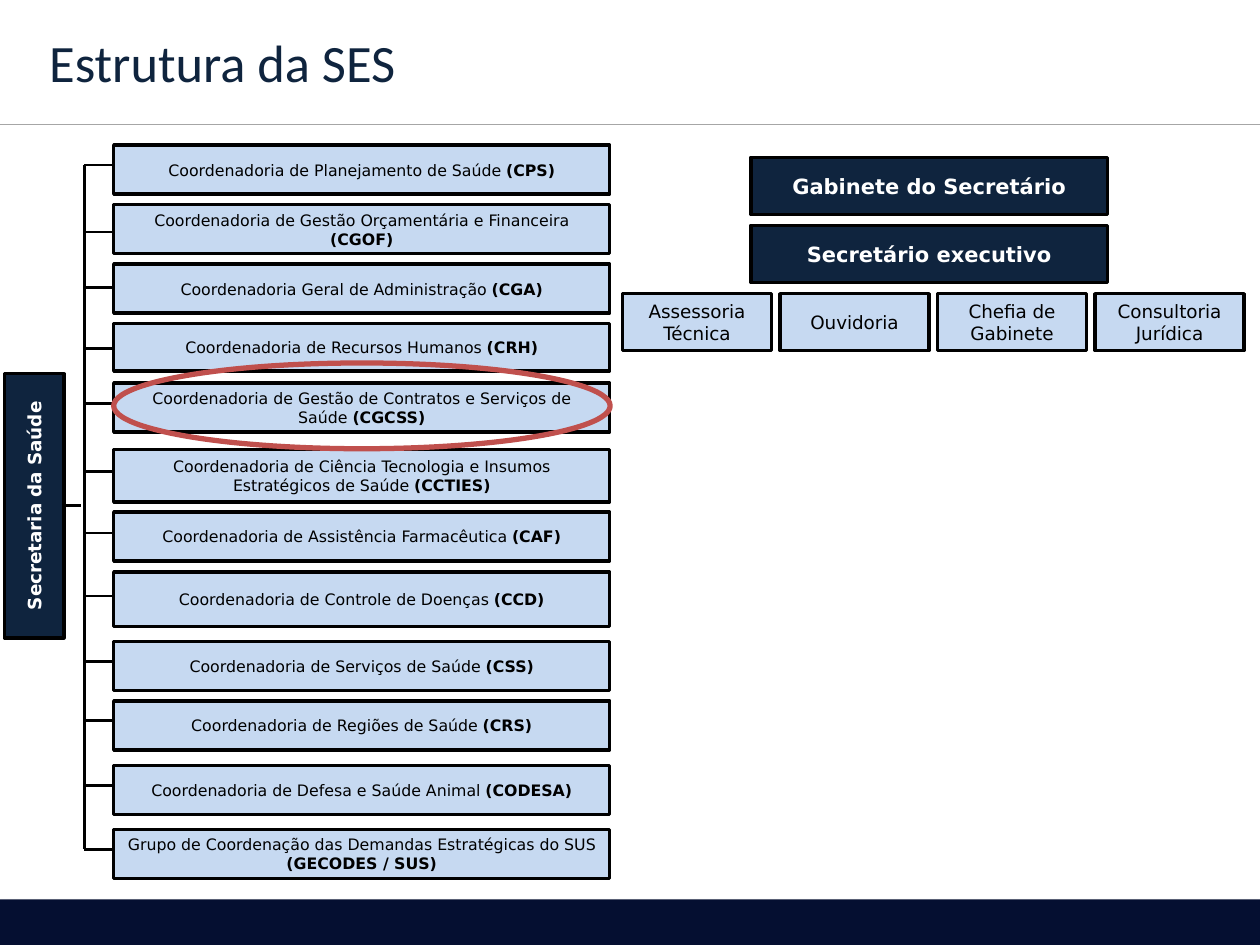
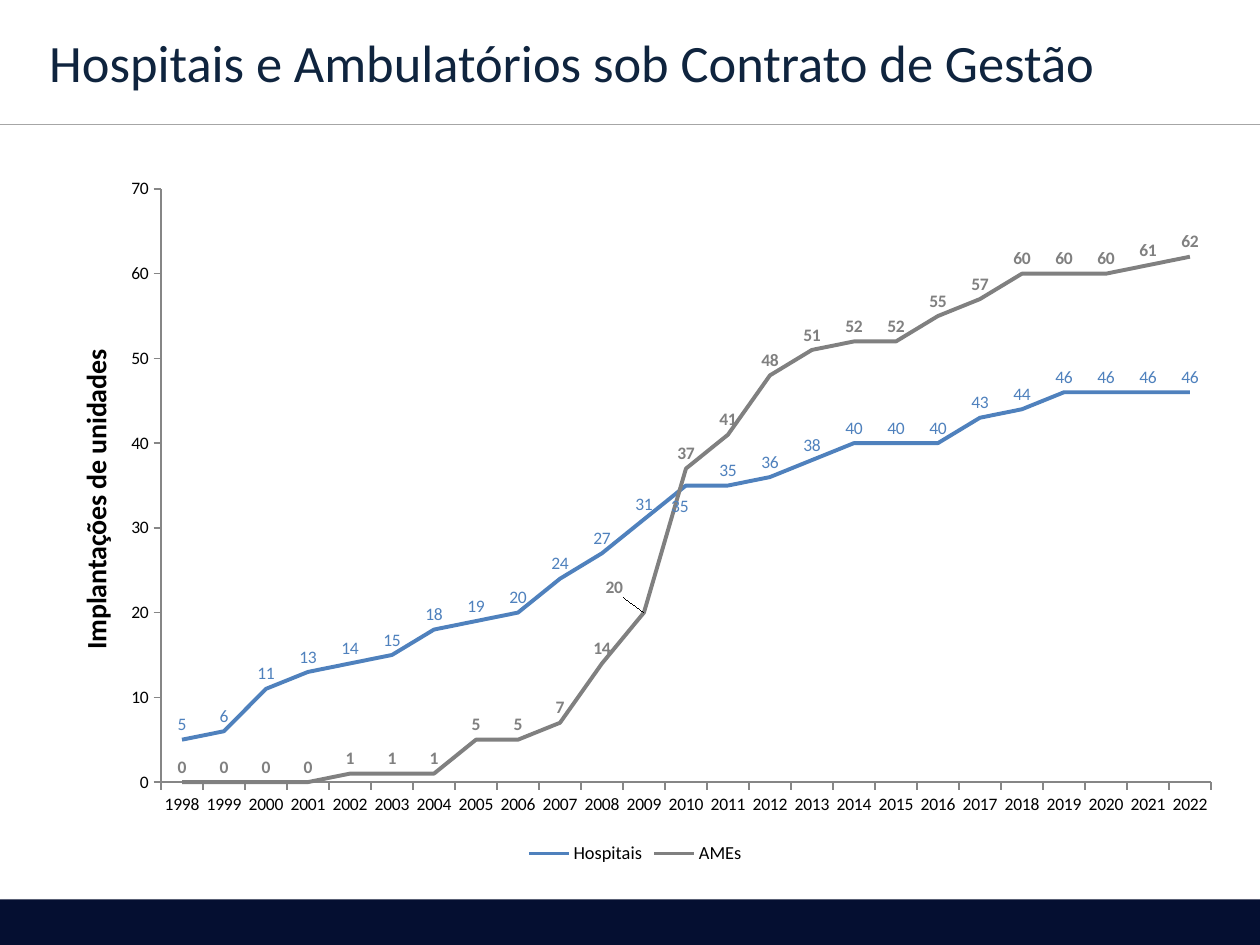
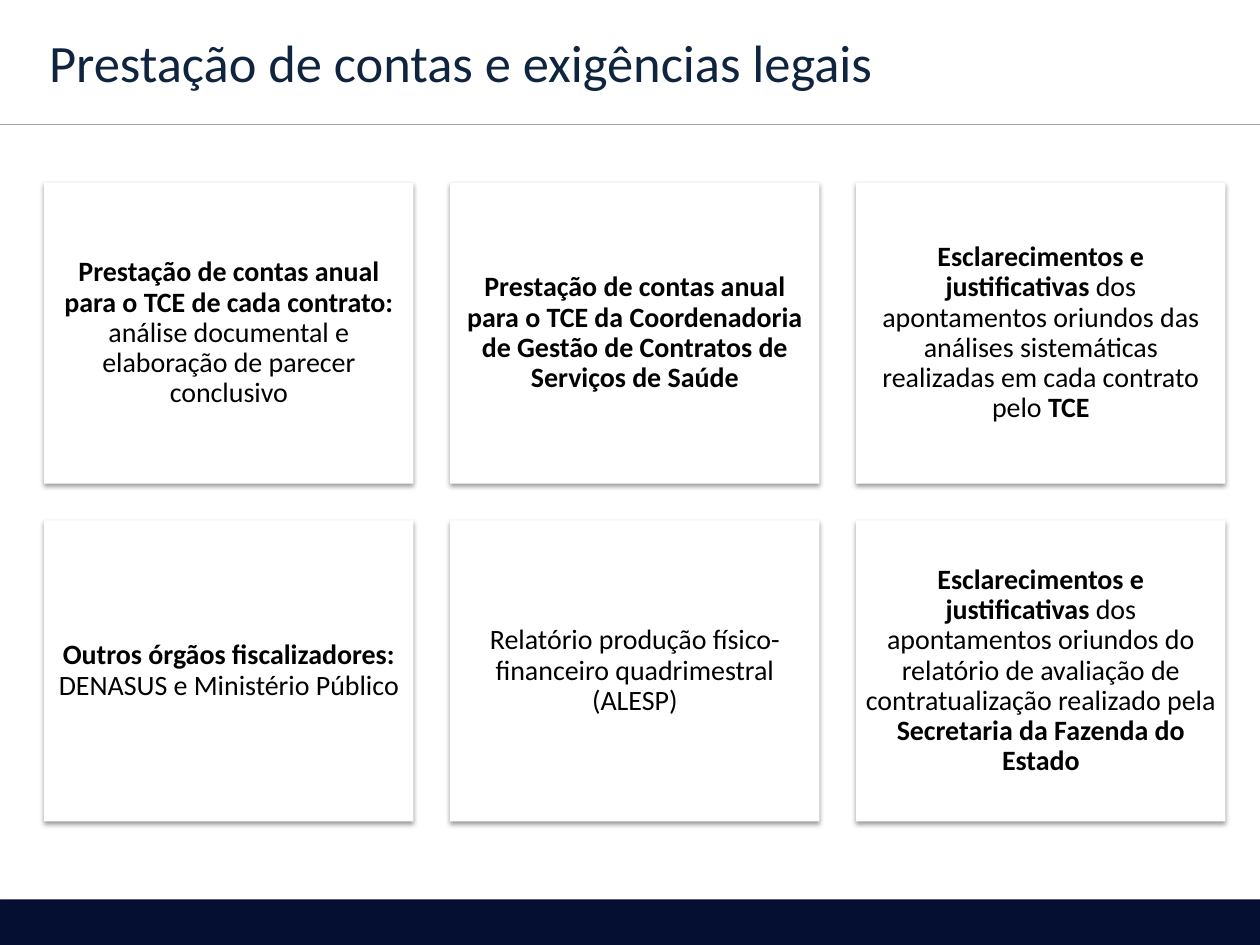
from lxml.etree import SubElement
from pptx import Presentation
from pptx.chart.data import CategoryChartData
from pptx.dml.color import RGBColor
from pptx.enum.chart import XL_CHART_TYPE, XL_LABEL_POSITION, XL_LEGEND_POSITION, XL_TICK_MARK
from pptx.enum.shapes import MSO_CONNECTOR, MSO_SHAPE
from pptx.enum.text import MSO_ANCHOR, PP_ALIGN
from pptx.oxml.ns import qn
from pptx.util import Pt

COLORS = {
    "navy": "0F243E", "band": "050F31", "rule": "A6A6A6", "sky": "C6D9F1",
    "black": "000000", "white": "FFFFFF", "red": "C0504D",
    "blue": "4F81BD", "gray": "808080", "axis": "868686",
}
RGB = {name: RGBColor.from_string(value) for name, value in COLORS.items()}
TEXT_FONT, CHART_FONT = "Calibri", "DejaVu Sans"
ORG_FONT = CHART_FONT
CHART_FONT = TEXT_FONT


def add_box(slide, bounds, fill=None, line=None, line_width=2, paragraphs=(), size=9,
            font=ORG_FONT, color="black", align=PP_ALIGN.CENTER, inset=7.2,
            line_spacing=1, preset=MSO_SHAPE.RECTANGLE, shadow=None):
    """Paragraphs are lists of (text, bold) runs; shadow is (blur, distance, opacity %)."""
    shape = slide.shapes.add_shape(preset, *map(Pt, bounds))
    if fill:
        shape.fill.solid()
        shape.fill.fore_color.rgb = RGB[fill]
    else:
        shape.fill.background()
    if line:
        shape.line.color.rgb = RGB[line]
        shape.line.width = Pt(line_width)
    else:
        shape.line.fill.background()
    shape.shadow.inherit = False
    if shadow:
        blur, distance, opacity = shadow
        effects = shape._element.spPr.find(qn("a:effectLst"))
        outer = SubElement(effects, qn("a:outerShdw"), blurRad=str(Pt(blur)),
                           dist=str(Pt(distance)), dir="5400000", rotWithShape="0")
        tint = SubElement(outer, qn("a:srgbClr"), val=COLORS["black"])
        SubElement(tint, qn("a:alpha"), val=str(opacity * 1000))
    frame = shape.text_frame
    frame.word_wrap = True
    frame.vertical_anchor = MSO_ANCHOR.MIDDLE
    frame.margin_left = frame.margin_right = Pt(inset)
    frame.margin_top = frame.margin_bottom = Pt(min(inset, 3.6))
    for index, runs in enumerate(paragraphs):
        paragraph = frame.add_paragraph() if index else frame.paragraphs[0]
        paragraph.alignment = align
        paragraph.line_spacing = line_spacing
        for text, bold in runs:
            run = paragraph.add_run()
            run.text = text
            run.font.name = font
            run.font.size = Pt(size)
            run.font.bold = bold
            run.font.color.rgb = RGB[color]
    return shape


def add_line(slide, start, end, color="black", width=1.5):
    connector = slide.shapes.add_connector(MSO_CONNECTOR.STRAIGHT, *map(Pt, start + end))
    connector.line.color.rgb = RGB[color]
    connector.line.width = Pt(width)
    SubElement(connector._element.spPr, qn("a:effectLst"))
    return connector


presentation = Presentation()
presentation.slide_width, presentation.slide_height = Pt(720), Pt(540)

# Shared band, rule and title
slides = []
for title in ("Estrutura da SES", "Hospitais e Ambulatórios sob Contrato de Gestão",
              "Prestação de contas e exigências legais"):
    slide = presentation.slides.add_slide(presentation.slide_layouts[6])
    add_box(slide, (0, 514, 720, 28), "band", shadow=(4, 3, 40))
    add_line(slide, (0, 71.3), (720, 71.3), "rule", 0.75)
    add_box(slide, (21, 3.6, 641, 63.4), paragraphs=[[(title, False)]], size=30,
            font=TEXT_FONT, color="navy", align=PP_ALIGN.LEFT)
    slides.append(slide)
structure_slide, growth_slide, duties_slide = slides

# Slide 1: organisation chart
secretariat = add_box(structure_slide, (2.5, 213.5, 34, 151), "navy", "black",
                      paragraphs=[[("Secretaria da Saúde", True)]], size=10.5, color="white")
secretariat.text_frame._txBody.bodyPr.set("vert", "vert270")

# Name, acronym, box top, box height, branch height on the trunk
departments = [
    ("Coordenadoria de Planejamento de Saúde ", "(CPS)", 83, 28, 94.3),
    ("Coordenadoria de Gestão Orçamentária e Financeira ", "(CGOF)", 117, 28, 132.5),
    ("Coordenadoria Geral de Administração ", "(CGA)", 151, 28, 164.2),
    ("Coordenadoria de Recursos Humanos ", "(CRH)", 185, 27, 199.2),
    ("Coordenadoria de Gestão de Contratos e Serviços de Saúde ", "(CGCSS)", 219, 28, 230.4),
    ("Coordenadoria de Ciência Tecnologia e Insumos Estratégicos de Saúde ", "(CCTIES)",
     256.8, 30, 269.3),
    ("Coordenadoria de Assistência Farmacêutica ", "(CAF)", 292.6, 28, 304.5),
    ("Coordenadoria de Controle de Doenças ", "(CCD)", 327, 31, 340.5),
    ("Coordenadoria de Serviços de Saúde ", "(CSS)", 366.5, 28, 378),
    ("Coordenadoria de Regiões de Saúde ", "(CRS)", 400.5, 28, 411.8),
    ("Coordenadoria de Defesa e Saúde Animal ", "(CODESA)", 437.5, 28, 448.8),
    ("Grupo de Coordenação das Demandas Estratégicas do SUS", "(GECODES / SUS)",
     474, 28, 485.3),
]
trunk_left, box_left = 48.2, 65
for name, acronym, top, height, branch in departments:
    runs = [(name, False), (acronym, True)]
    paragraphs = [runs] if name.endswith(" ") else [[run] for run in runs]
    add_box(structure_slide, (box_left, top, 283.4, height), "sky", "black",
            paragraphs=paragraphs)
    add_line(structure_slide, (trunk_left, branch), (box_left, branch))
add_line(structure_slide, (trunk_left, departments[0][-1]), (trunk_left, departments[-1][-1]))
stem = add_line(structure_slide, (36.5, 289), (46.5, 289))
stem.begin_connect(secretariat, 3)
add_box(structure_slide, (box_left, 207.4, 283.7, 49), line="red", line_width=3,
        preset=MSO_SHAPE.OVAL)

for row, name in enumerate(("Gabinete do Secretário", "Secretário executivo")):
    add_box(structure_slide, (429, 90 + 38.9 * row, 204, 32.5), "navy", "black",
            paragraphs=[[(name, True)]], size=12, color="white")
for column, name in enumerate(("Assessoria Técnica", "Ouvidoria", "Chefia de Gabinete",
                               "Consultoria Jurídica")):
    add_box(structure_slide, (355.8 + 90 * column, 167.8, 85, 32.5), "sky", "black",
            paragraphs=[[(name, False)]], size=10.5)

# Slide 2: line chart
hospitals = [5, 6, 11, 13, 14, 15, 18, 19, 20, 24, 27, 31, 35, 35, 36, 38, 40, 40, 40, 43,
             44, 46, 46, 46, 46]
clinics = [0, 0, 0, 0, 1, 1, 1, 5, 5, 7, 14, 20, 37, 41, 48, 51, 52, 52, 55, 57, 60, 60,
           60, 61, 62]
chart_data = CategoryChartData()
chart_data.categories = [str(year) for year in range(1998, 2023)]
chart_data.add_series("Hospitais", hospitals)
chart_data.add_series("AMEs", clinics)
chart_width, chart_height = 686, 402.5
chart = growth_slide.shapes.add_chart(
    XL_CHART_TYPE.LINE, Pt(20), Pt(94.5), Pt(chart_width), Pt(chart_height), chart_data).chart
chart.has_title = False
chart.font.name = CHART_FONT
chart.font.size = Pt(10)
chart.font.color.rgb = RGB["black"]
chart.has_legend = True
chart.legend.position = XL_LEGEND_POSITION.BOTTOM
chart.legend.include_in_layout = False
chart.legend.font.size = Pt(10.5)
chart.legend.font.name = CHART_FONT
chart.plots[0].vary_by_categories = False

value_axis = chart.value_axis
value_axis.minimum_scale, value_axis.maximum_scale, value_axis.major_unit = 0, 70, 10
value_axis.has_major_gridlines = False
for axis in (chart.category_axis, value_axis):
    axis.major_tick_mark = XL_TICK_MARK.OUTSIDE
    axis.format.line.color.rgb = RGB["axis"]
    axis.format.line.width = Pt(0.75)
title_run = value_axis.axis_title.text_frame.paragraphs[0].add_run()
title_run.text = "Implantações de unidades"
title_run.font.name = CHART_FONT
title_run.font.size = Pt(16)
title_run.font.bold = True
title_run.font.color.rgb = RGB["black"]

# Manual layouts: parent, child index, modes, distances in points
edge = {"xMode": "edge", "yMode": "edge"}
layouts = [
    (chart._chartSpace.chart.plotArea, 0, {"layoutTarget": "inner", **edge},
     {"x": 72, "y": 13.5, "w": 600, "h": 339}),
    (value_axis.axis_title._element, 1, edge, {"x": 21, "y": 102.5}),
]
series_styles = [("blue", False, 12, {"x": -3.5, "y": 20.5}),
                 ("gray", True, 11, {"x": -17, "y": -6})]
for series, (color, bold, moved_point, offset) in zip(chart.plots[0].series, series_styles):
    series.smooth = False
    series.format.line.color.rgb = RGB[color]
    series.format.line.width = Pt(2.25)
    labels = series.data_labels
    labels.show_value = True
    moved_label = series.points[moved_point].data_label
    for label in (labels, moved_label):
        label.position = XL_LABEL_POSITION.ABOVE
        label.font.name = CHART_FONT
        label.font.size = Pt(10)
        label.font.bold = bold
        label.font.color.rgb = RGB[color]
    layouts.append((series._element.xpath(".//c:dLbl")[0], 1, {}, offset))

for parent, index, modes, distances in layouts:
    layout = parent.find(qn("c:layout"))
    if layout is not None:
        parent.remove(layout)
    layout = parent.makeelement(qn("c:layout"))
    parent.insert(index, layout)
    manual = SubElement(layout, qn("c:manualLayout"))
    for tag, value in modes.items():
        SubElement(manual, qn(f"c:{tag}"), val=value)
    for tag, points in distances.items():
        whole = chart_width if tag in "xw" else chart_height
        SubElement(manual, qn(f"c:{tag}"), val=str(points / whole))

# Slide 3: grid of duties
duties = [
    [("Prestação de contas anual para o TCE de cada contrato: ", True),
     ("análise documental e elaboração de parecer conclusivo", False)],
    [("Prestação de contas anual para o TCE da Coordenadoria de Gestão de Contratos de "
      "Serviços de Saúde", True)],
    [("Esclarecimentos e justificativas", True),
     (" dos apontamentos oriundos das análises sistemáticas realizadas em cada contrato pelo ",
      False), ("TCE", True)],
    [("Outros órgãos fiscalizadores:", True), (" DENASUS e Ministério Público", False)],
    [("Relatório produção físico-financeiro quadrimestral (ALESP)", False)],
    [("Esclarecimentos e justificativas", True),
     (" dos apontamentos oriundos do relatório de avaliação de contratualização realizado pela ",
      False), ("Secretaria da Fazenda do Estado", True)],
]
for index, runs in enumerate(duties):
    row, column = divmod(index, 3)
    add_box(duties_slide, (25.3 + 232 * column, 104.4 + 193 * row, 211, 172), "white",
            paragraphs=[runs], size=16, font=TEXT_FONT, inset=5, line_spacing=0.9,
            shadow=(3.1, 1.6, 38))

presentation.save("out.pptx")
